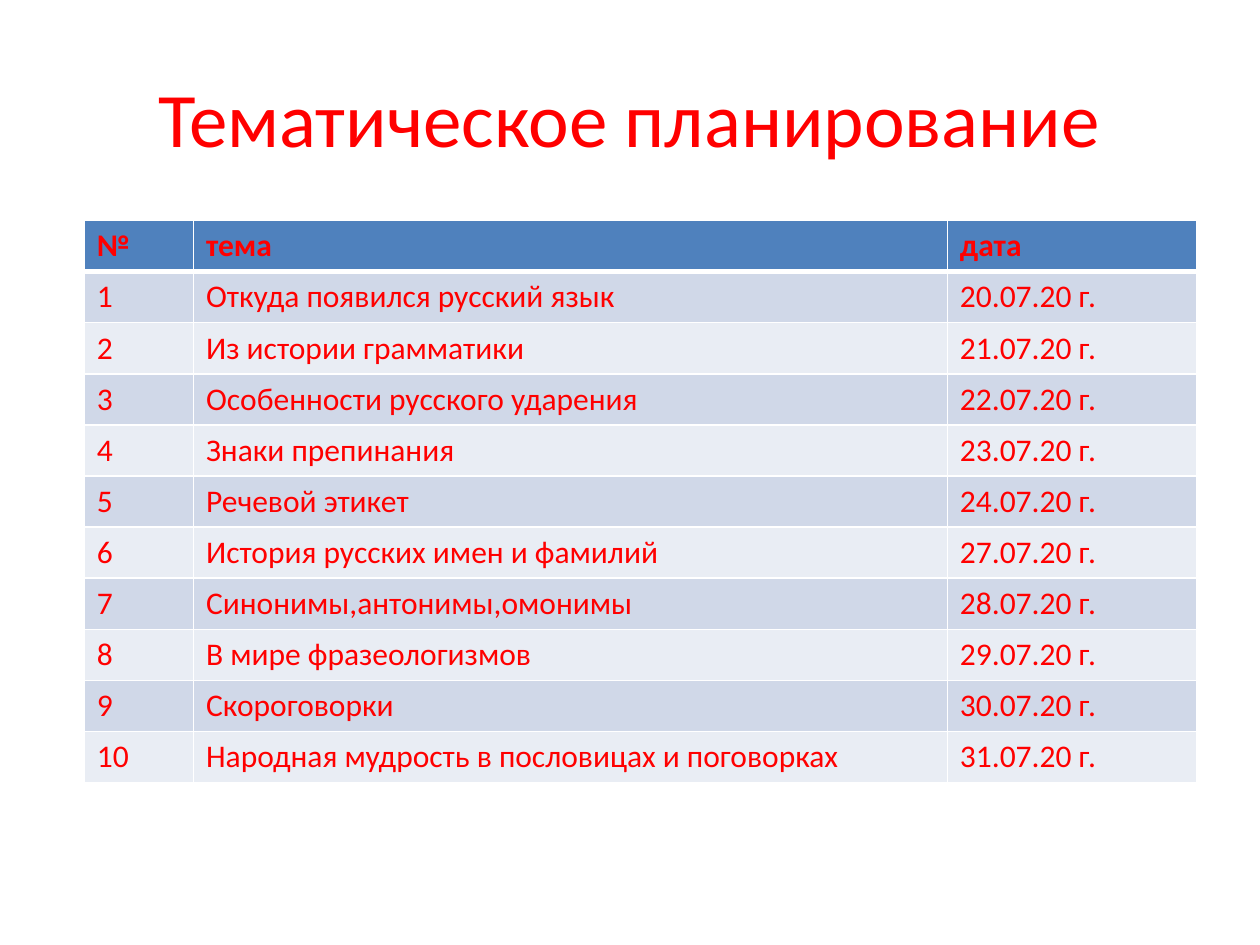
from dataclasses import dataclass

from lxml import etree
from pptx import Presentation
from pptx.dml.color import RGBColor
from pptx.enum import text
from pptx.oxml import ns
from pptx.util import Pt


@dataclass(frozen=True)
class Theme:
    font: str = "Calibri"
    ink: str = "FF0000"
    header: str = "4F81BD"
    bands: tuple = ("D0D8E8", "E9EDF4")
    border: str = "FFFFFF"
    title_size: int = 44
    cell_size: int = 18
    thin: int = 1
    thick: int = 3


THEME = Theme()
HEADINGS = ("№", "тема", "дата")
LESSONS = (
    ("Откуда появился русский язык", 20),
    ("Из истории грамматики", 21),
    ("Особенности русского ударения", 22),
    ("Знаки препинания", 23),
    ("Речевой этикет", 24),
    ("История русских имен и фамилий", 27),
    ("Синонимы,антонимы,омонимы", 28),
    ("В мире фразеологизмов", 29),
    ("Скороговорки", 30),
    ("Народная мудрость в пословицах и поговорках", 31),
)
COLUMN_WIDTHS = (62.4, 430.8, 142.6)
ROW_HEIGHT = 29.2


def format_text(frame, size, bold=False):
    for para in frame.paragraphs:
        for run in para.runs:
            run.font.name = THEME.font
            run.font.size = Pt(size)
            run.font.bold = bold
            run.font.color.rgb = RGBColor.from_string(THEME.ink)


def add_title(page, wording):
    title = page.shapes.title
    title.left, title.top, title.width, title.height = Pt(36), Pt(21.6), Pt(648), Pt(90)
    frame = title.text_frame
    frame.text = wording
    frame.vertical_anchor = text.MSO_ANCHOR.MIDDLE
    frame.paragraphs[0].alignment = text.PP_ALIGN.CENTER
    format_text(frame, THEME.title_size)


def set_borders(cell, top, bottom):
    properties = cell._tc.get_or_add_tcPr()
    widths = {"lnL": THEME.thin, "lnR": THEME.thin, "lnT": top, "lnB": bottom}
    for side, width in widths.items():
        line = etree.SubElement(properties, ns.qn(f"a:{side}"), w=str(Pt(width)))
        fill = etree.SubElement(line, ns.qn("a:solidFill"))
        etree.SubElement(fill, ns.qn("a:srgbClr"), val=THEME.border)


def format_cell(cell, wording, row):
    is_header = row == 0
    cell.text_frame.text = wording
    format_text(cell.text_frame, THEME.cell_size, is_header)
    set_borders(
        cell,
        top=THEME.thick if row == 1 else THEME.thin,
        bottom=THEME.thick if is_header else THEME.thin,
    )
    color = THEME.header if is_header else THEME.bands[(row - 1) % 2]
    cell.fill.solid()
    cell.fill.fore_color.rgb = RGBColor.from_string(color)


def add_schedule(page, rows):
    frame = page.shapes.add_table(
        len(rows), len(COLUMN_WIDTHS), Pt(48.2), Pt(126),
        Pt(sum(COLUMN_WIDTHS)), Pt(ROW_HEIGHT * len(rows)),
    )
    table = frame.table
    for column, width in zip(table.columns, COLUMN_WIDTHS):
        column.width = Pt(width)
    for index, wordings in enumerate(rows):
        table.rows[index].height = Pt(ROW_HEIGHT)
        for column, wording in enumerate(wordings):
            format_cell(table.cell(index, column), wording, index)


def main():
    deck = Presentation()
    deck.slide_width, deck.slide_height = Pt(720), Pt(540)
    page = deck.slides.add_slide(deck.slide_layouts[5])
    add_title(page, "Тематическое планирование")
    lessons = [
        (str(number), topic, f"{day}.07.20 г.")
        for number, (topic, day) in enumerate(LESSONS, start=1)
    ]
    add_schedule(page, [HEADINGS, *lessons])
    deck.save("out.pptx")


if __name__ == "__main__":
    main()
